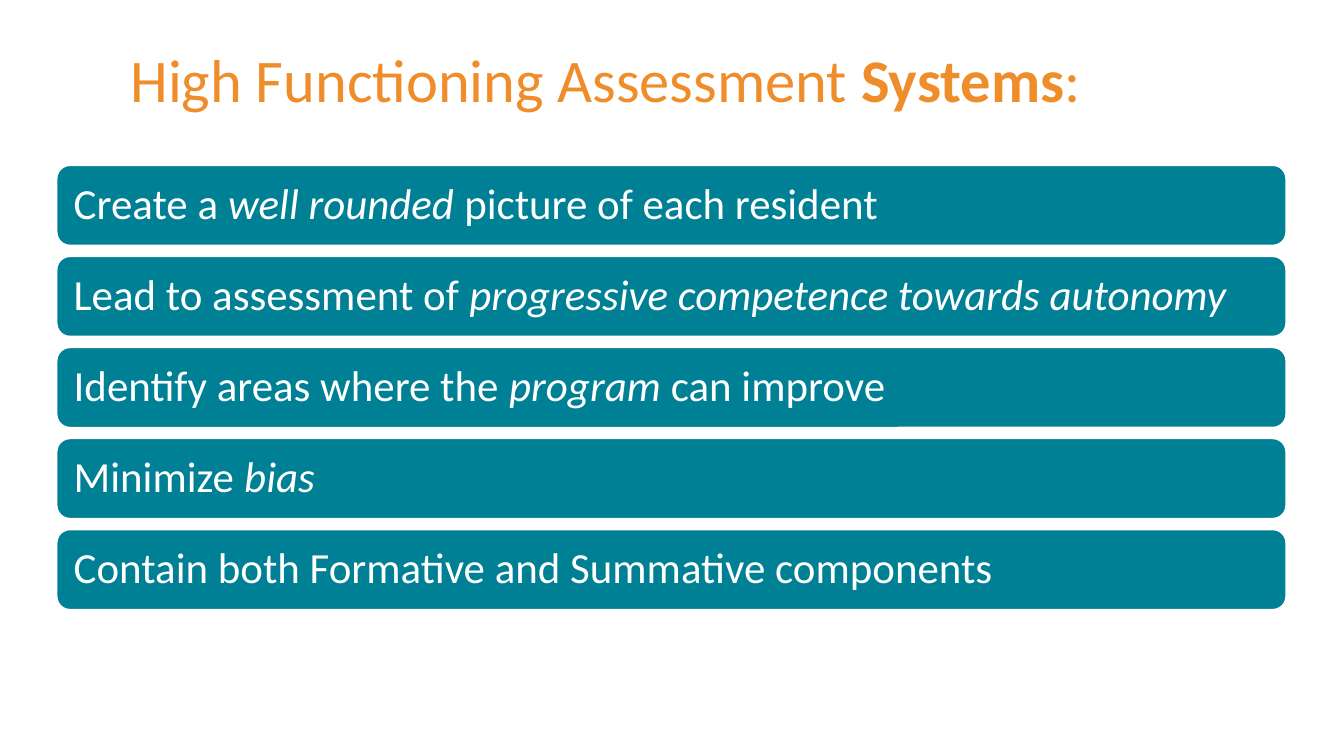
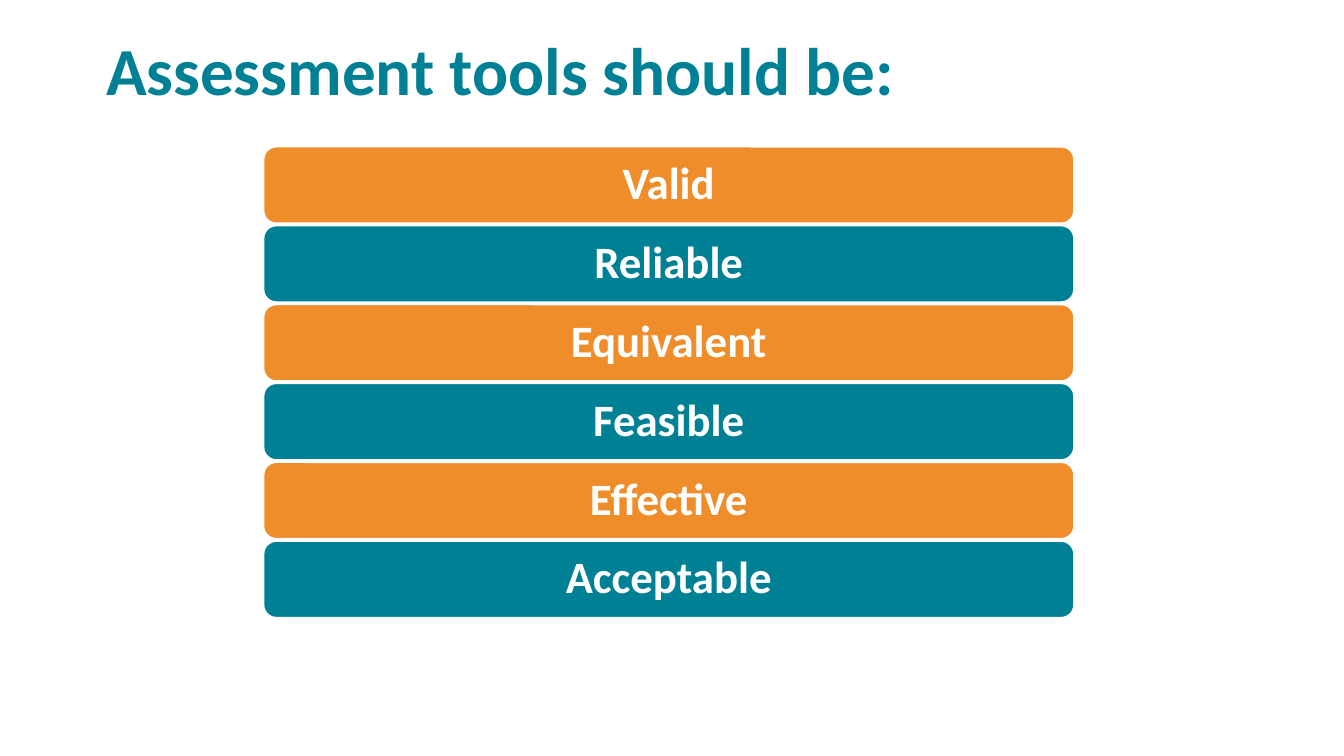
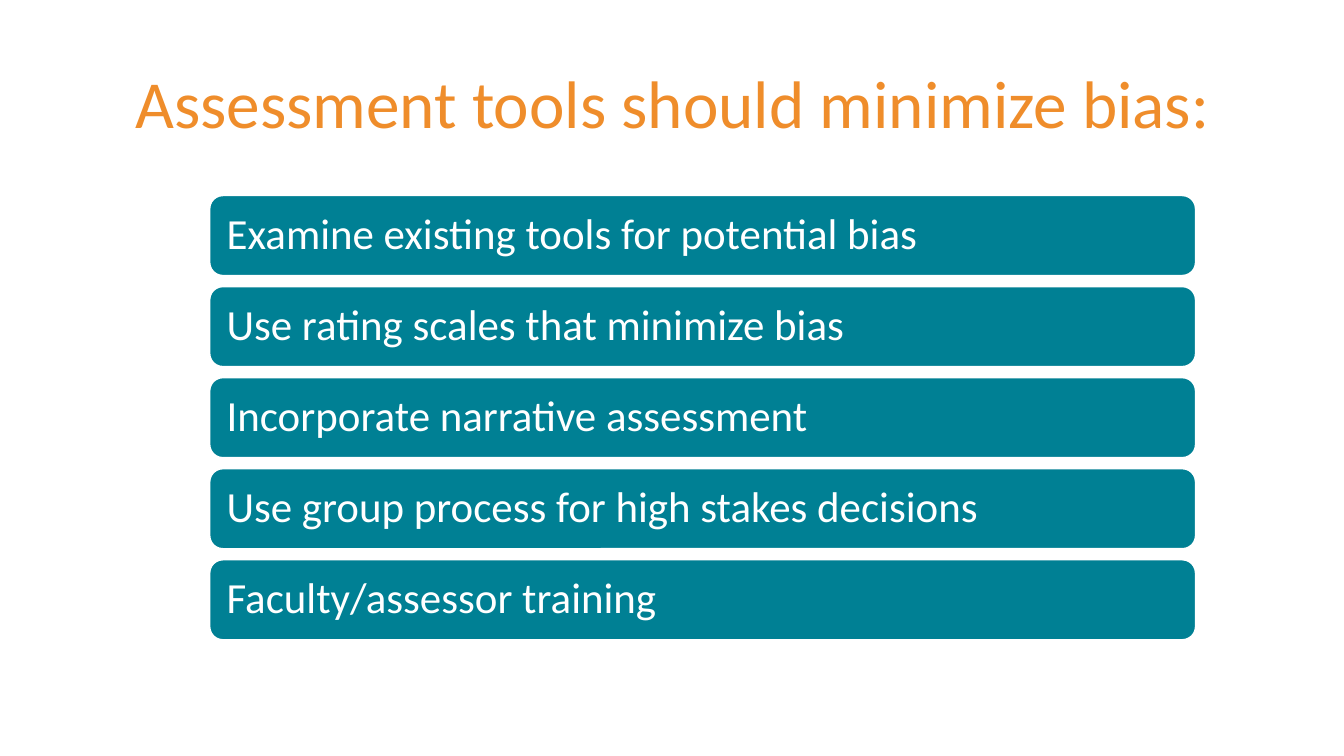
import pptx
import pptx.dml.color
import pptx.enum.shapes
import pptx.enum.text
import pptx.util

Cm = pptx.util.Cm
Pt = pptx.util.Pt
ALIGN = pptx.enum.text.PP_ALIGN

FONT = "Calibri"
COLORS = {"orange": "EF8D2B", "teal": "008094", "white": "FFFFFF"}

# A text is a list of spans: a plain string, or (string, "bold" or "italic").
# Boxes are (left, top, width, height) in cm; a bar box places the first bar.
SLIDES = [
    {
        "title": ["High Functioning Assessment ", ("Systems", "bold"), ":"],
        "title_box": (2.21, 0.1, 19.23, 2.92),
        "title_format": {"size": 32.4, "color": "orange"},
        "bars": [
            ["Create a ", ("well rounded ", "italic"), "picture of each resident"],
            ["Lead to assessment of ",
             ("progressive competence towards autonomy", "italic")],
            ["Identify areas where the ", ("program", "italic"), " can improve"],
            ["Minimize ", ("bias", "italic")],
            ["Contain both Formative and Summative components"],
        ],
        "bar_box": (1.07, 3.12, 23.24, 1.52),
        "gap": 0.2,
        "fills": ["teal"],
        "bar_format": {"size": 23},
    },
    {
        "title": ["Assessment tools should be:"],
        "title_box": (1.75, 0, 21.89, 2.77),
        "title_format": {"size": 36, "color": "teal", "bold": True},
        "bars": [["Valid"], ["Reliable"], ["Equivalent"],
                 ["Feasible"], ["Effective"], ["Acceptable"]],
        "bar_box": (4.98, 2.77, 15.32, 1.45),
        "gap": 0.04,
        "fills": ["orange", "teal"],
        "bar_format": {"size": 24, "bold": True, "align": ALIGN.CENTER},
    },
    {
        "title": ["Assessment tools should minimize bias:"],
        "title_box": (1.22, 0.64, 22.99, 2.77),
        "title_format": {"size": 36, "color": "orange", "align": ALIGN.CENTER},
        "bars": [
            ["Examine existing tools for potential bias"],
            ["Use rating scales that minimize bias"],
            ["Incorporate narrative assessment"],
            ["Use group process for high stakes decisions"],
            ["Faculty/assessor training"],
        ],
        "bar_box": (3.96, 3.69, 18.64, 1.52),
        "gap": 0.2,
        "fills": ["teal"],
        "bar_format": {"size": 23},
    },
]


def rgb(name):
    return pptx.dml.color.RGBColor.from_string(COLORS[name])


def write_text(shape, spans, size, color="white", bold=False, align=ALIGN.LEFT):
    frame = shape.text_frame
    frame.word_wrap = True
    frame.auto_size = pptx.enum.text.MSO_AUTO_SIZE.NONE
    frame.vertical_anchor = pptx.enum.text.MSO_ANCHOR.MIDDLE
    para = frame.paragraphs[0]
    para.alignment = align
    para.line_spacing = 0.9
    for item in spans:
        text, style = (item, None) if isinstance(item, str) else item
        span = para.add_run()
        span.text = text
        span.font.name = FONT
        span.font.size = Pt(size)
        span.font.color.rgb = rgb(color)
        span.font.bold = bold or style == "bold"
        span.font.italic = style == "italic"


def add_title(page, spans, box, text_format):
    title = page.shapes.title
    title.left, title.top, title.width, title.height = map(Cm, box)
    write_text(title, spans, **text_format)


def add_bars(page, bars, box, gap, fills, text_format):
    """Stack one rounded bar per text, taking the fills in turn."""
    left, top, width, height = box
    for index, spans in enumerate(bars):
        bar = page.shapes.add_shape(
            pptx.enum.shapes.MSO_SHAPE.ROUNDED_RECTANGLE,
            Cm(left), Cm(top + index * (height + gap)), Cm(width), Cm(height))
        bar.shadow.inherit = False
        bar.fill.solid()
        bar.fill.fore_color.rgb = rgb(fills[index % len(fills)])
        bar.line.color.rgb = rgb("white")
        bar.line.width = Pt(1)
        write_text(bar, spans, **text_format)


def main():
    deck = pptx.Presentation()
    deck.slide_width, deck.slide_height = Cm(25.4), Cm(14.28)
    title_only = deck.slide_layouts.get_by_name("Title Only")
    for content in SLIDES:
        page = deck.slides.add_slide(title_only)
        add_title(page, content["title"], content["title_box"],
                  content["title_format"])
        add_bars(page, content["bars"], content["bar_box"], content["gap"],
                 content["fills"], content["bar_format"])
    deck.save("out.pptx")


if __name__ == "__main__":
    main()
